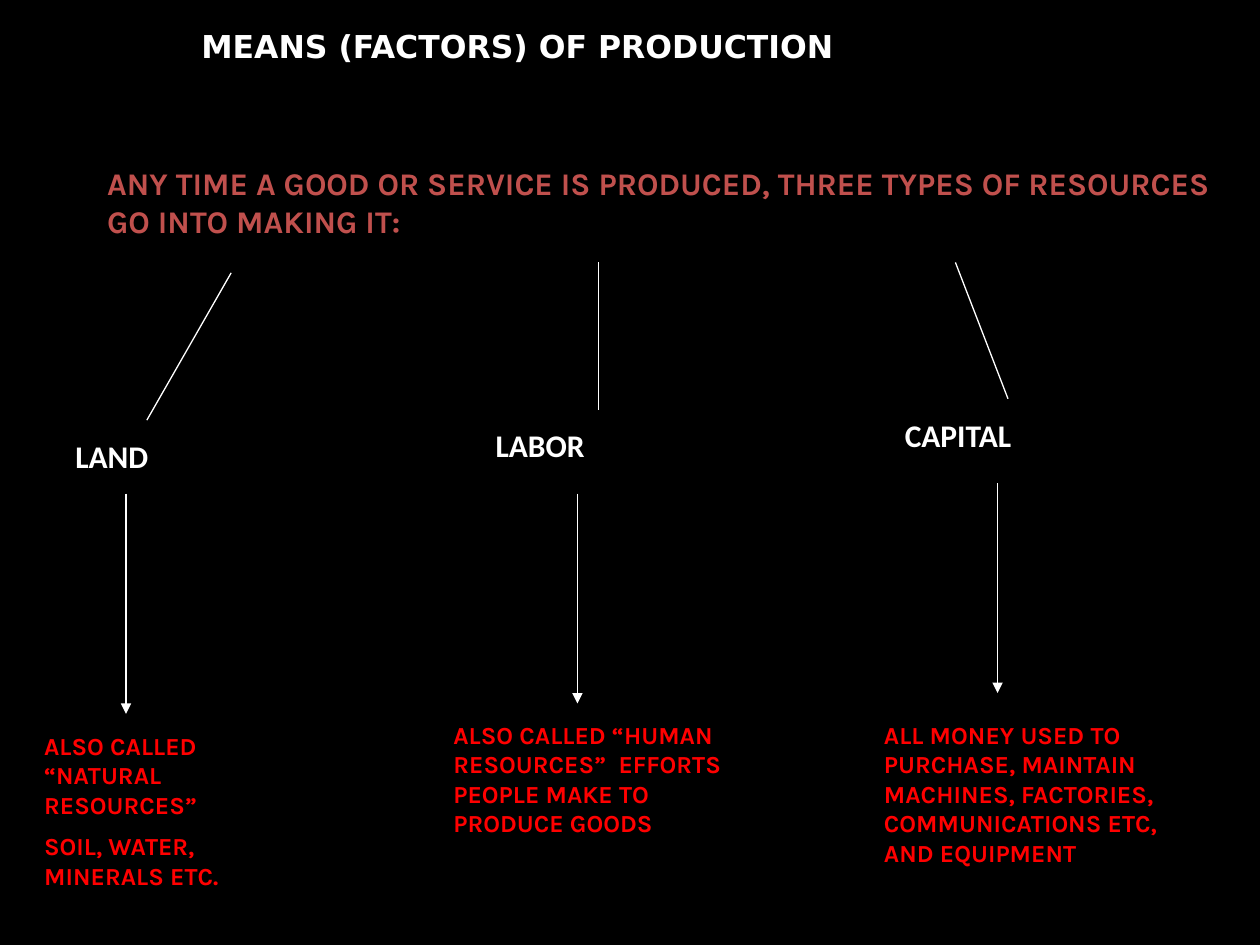
from lxml import etree
from pptx import Presentation
from pptx.dml.color import RGBColor
from pptx.enum.shapes import MSO_CONNECTOR
from pptx.enum.text import MSO_AUTO_SIZE
from pptx.oxml.ns import qn
from pptx.util import Cm, Pt

WHITE, RED, BRICK, BLACK = "FFFFFF", "FF0000", "C0504D", "000000"

prs = Presentation()
prs.slide_width, prs.slide_height = Cm(25.4), Cm(19.05)
slide = prs.slides.add_slide(prs.slide_layouts[6])
slide.background.fill.solid()
slide.background.fill.fore_color.rgb = RGBColor.from_string(BLACK)


def add_text(box, paragraphs, font, size, color):
    sp = slide.shapes.add_textbox(*[Cm(v) for v in box])
    tf = sp.text_frame
    tf.word_wrap = True
    tf.auto_size = MSO_AUTO_SIZE.SHAPE_TO_FIT_TEXT
    for i, text in enumerate(paragraphs):
        p = tf.paragraphs[0] if i == 0 else tf.add_paragraph()
        if i:
            p.space_before = Pt(size / 2)
        r = p.add_run()
        r.text = text
        r.font.name, r.font.size, r.font.bold = font, Pt(size), True
        r.font.color.rgb = RGBColor.from_string(color)


def add_line(ends, arrow=False):
    sp = slide.shapes.add_connector(MSO_CONNECTOR.STRAIGHT, *[Cm(v) for v in ends])
    sp.line.width = Pt(0.75)
    sp.line.color.rgb = RGBColor.from_string(WHITE)
    if arrow:
        etree.SubElement(sp.line._get_or_add_ln(), qn("a:tailEnd"), type="triangle")
    etree.SubElement(sp._element.spPr, qn("a:effectLst"))


# Title and introduction
add_text((3.81, 0.42, 19.26, 1.27), ["MEANS (FACTORS) OF PRODUCTION"],
         "DejaVu Sans", 18, WHITE)
add_text((1.91, 3.18, 22.86, 1.8),
         ["ANY TIME A GOOD OR SERVICE IS PRODUCED, THREE TYPES OF RESOURCES "
          "GO INTO MAKING IT:"], "Karla", 18, BRICK)

# One branch per factor: name, name box, line, arrow, details box, details
branches = [
    ("LAND", (1.27, 8.68, 3.39, 1.27), (4.66, 5.5, 2.96, 8.47),
     (2.54, 9.95, 2.54, 14.39), (0.64, 14.61, 4.87, 3.51),
     ["ALSO CALLED “NATURAL RESOURCES”", "SOIL, WATER, MINERALS ETC."]),
    ("LABOR", (9.74, 8.47, 5.29, 1.27), (12.07, 5.29, 12.07, 8.26),
     (11.64, 9.95, 11.64, 14.18), (8.89, 14.39, 5.93, 3.81),
     ["ALSO CALLED “HUMAN RESOURCES”  EFFORTS PEOPLE MAKE TO PRODUCE GOODS"]),
    ("CAPITAL", (17.99, 8.26, 5.29, 1.27), (19.26, 5.29, 20.32, 8.04),
     (20.11, 9.74, 20.11, 13.97), (17.57, 14.39, 6.35, 3.81),
     ["ALL MONEY USED TO PURCHASE, MAINTAIN MACHINES, FACTORIES, "
      "COMMUNICATIONS ETC, AND EQUIPMENT"]),
]
for name, name_box, line, arrow, details_box, details in branches:
    add_line(line)
    add_text(name_box, [name], "Calibri", 18, WHITE)
    add_line(arrow, arrow=True)
    add_text(details_box, details, "Karla", 14, RED)

prs.save("out.pptx")
